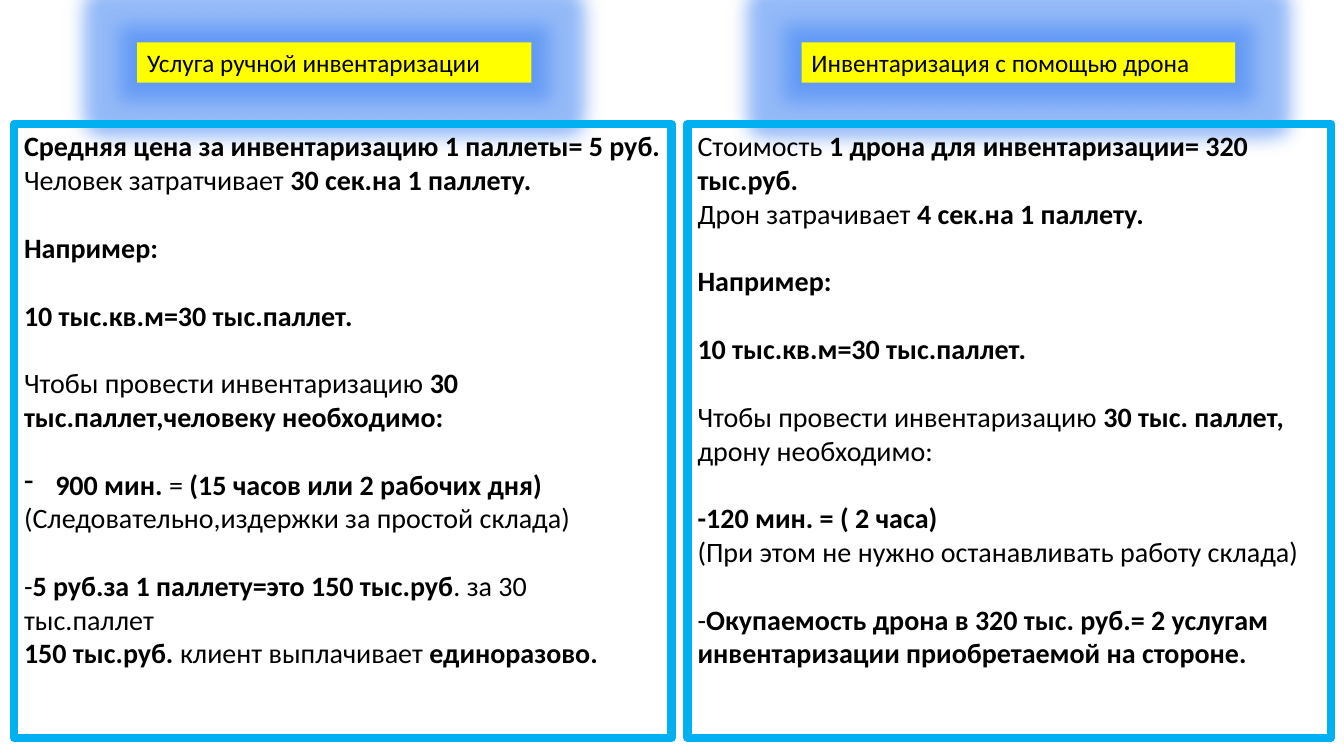
import pptx
import pptx.dml.color
import pptx.enum.shapes
import pptx.enum.text
import pptx.oxml.ns
import pptx.util
from lxml import etree

FONT = "Calibri"
BLACK, YELLOW, SKY, GLOW = "000000", "FFFF00", "00B0F0", "4285F4"
WIDTH, HEIGHT = pptx.util.Inches(13.33), pptx.util.Inches(7.5)
LINE_GAP = 24.4  # height of one line of body text, in points

# Rows as (top, height), in percent of the slide height
HEADER_ROW = (5.6, 5.33)
PANEL_ROW = (16.4, 81.2)

# Columns as (left, width), in percent of the slide width.
# In the text, ** switches bold, "" opens a gap and "• " starts a dash bullet.
COLUMNS = [
    {
        "title": "Услуга ручной инвентаризации",
        "header": (10.2, 29.33),
        "panel": (1.05, 48.91),
        "lines": [
            "**Средняя цена за инвентаризацию 1 паллеты= 5 руб.**",
            "Человек затратчивает **30 сек.на 1 паллету.**",
            "",
            "**Например:**",
            "",
            "**10 тыс.кв.м=30 тыс.паллет.**",
            "",
            "Чтобы провести инвентаризацию **30 тыс.паллет,человеку необходимо:**",
            "",
            "• **900 мин. **= **(15 часов или 2 рабочих дня)**",
            "(Следовательно,издержки за простой склада)",
            "",
            "-**5 руб.за 1 паллету=это 150 тыс.руб**. за 30 тыс.паллет",
            "**150 тыс.руб. **клиент выплачивает **единоразово.**",
        ],
    },
    {
        "title": "Инвентаризация с помощью дрона",
        "header": (59.64, 32.26),
        "panel": (51.16, 47.86),
        "lines": [
            "Стоимость **1 дрона для инвентаризации= 320 тыс.руб.**",
            "Дрон затрачивает **4 сек.на 1 паллету.**",
            "",
            "**Например:**",
            "",
            "**10 тыс.кв.м=30 тыс.паллет.**",
            "",
            "Чтобы провести инвентаризацию **30 тыс. паллет, **дрону необходимо:",
            "",
            "**-120 мин. = ( 2 часа)**",
            "(При этом не нужно останавливать работу склада)",
            "",
            "-**Окупаемость дрона в 320 тыс. руб.= 2 услугам "
            "инвентаризации приобретаемой на стороне.**",
        ],
    },
]


def color(value):
    return pptx.dml.color.RGBColor.from_string(value)


def add_box(slide, column, row):
    """Add a plain rectangle whose text starts at the top left."""
    left, width = (int(WIDTH * share / 100) for share in column)
    top, height = (int(HEIGHT * share / 100) for share in row)
    shape = slide.shapes.add_shape(
        pptx.enum.shapes.MSO_SHAPE.RECTANGLE, left, top, width, height)
    shape.shadow.inherit = False
    frame_format = {
        "word_wrap": True,
        "vertical_anchor": pptx.enum.text.MSO_ANCHOR.TOP,
    }
    for name, value in frame_format.items():
        setattr(shape.text_frame, name, value)
    return shape


def write_line(paragraph, line, size):
    """Write one paragraph, switching bold at every ** mark."""
    paragraph.alignment = pptx.enum.text.PP_ALIGN.LEFT
    for index, text in enumerate(line.split("**")):
        if not text:
            continue
        run = paragraph.add_run()
        run.text = text
        run.font.color.rgb = color(BLACK)
        font_format = {
            "name": FONT,
            "size": pptx.util.Pt(size),
            "bold": index % 2 == 1,
        }
        for name, value in font_format.items():
            setattr(run.font, name, value)


def add_dash_bullet(paragraph):
    properties = paragraph._p.get_or_add_pPr()
    indent = pptx.util.Inches(0.31)
    properties.set("marL", str(indent))
    properties.set("indent", str(-indent))
    bullet = etree.SubElement(properties, pptx.oxml.ns.qn("a:buChar"))
    bullet.set("char", "-")


def add_halo(shape):
    """Surround a shape with a wide glow and a tighter centred shadow."""
    effects = shape._element.spPr.find(pptx.oxml.ns.qn("a:effectLst"))
    layers = {
        "a:glow": {"rad": pptx.util.Inches(0.36)},
        "a:outerShdw": {"blurRad": pptx.util.Inches(0.12), "dist": 0,
                        "algn": "ctr", "rotWithShape": 0},
    }
    for tag, attributes in layers.items():
        layer = etree.SubElement(effects, pptx.oxml.ns.qn(tag))
        for name, value in attributes.items():
            layer.set(name, str(value))
        tint = etree.SubElement(layer, pptx.oxml.ns.qn("a:srgbClr"), val=GLOW)
        etree.SubElement(tint, pptx.oxml.ns.qn("a:alpha"), val="50000")


def add_header(slide, column):
    shape = add_box(slide, column["header"], HEADER_ROW)
    shape.fill.solid()
    shape.fill.fore_color.rgb = color(YELLOW)
    shape.line.fill.background()
    add_halo(shape)
    write_line(shape.text_frame.paragraphs[0], column["title"], 18)


def add_panel(slide, column):
    shape = add_box(slide, column["panel"], PANEL_ROW)
    shape.fill.background()
    shape.line.color.rgb = color(SKY)
    shape.line.width = pptx.util.Pt(6)
    etree.SubElement(shape.line._get_or_add_ln(), pptx.oxml.ns.qn("a:round"))
    frame = shape.text_frame
    paragraph, gap = frame.paragraphs[0], 0
    for index, line in enumerate(column["lines"]):
        if not line:
            gap = LINE_GAP
            continue
        if index:
            paragraph = frame.add_paragraph()
        paragraph.space_before = pptx.util.Pt(gap)
        write_line(paragraph, line.removeprefix("• "), 20)
        if line.startswith("• "):
            add_dash_bullet(paragraph)
        gap = 0


def main():
    presentation = pptx.Presentation()
    presentation.slide_width, presentation.slide_height = WIDTH, HEIGHT
    slide = presentation.slides.add_slide(presentation.slide_layouts[6])

    # Yellow headings first, then the framed panels over their halos
    for add_part in (add_header, add_panel):
        for column in COLUMNS:
            add_part(slide, column)

    presentation.save("out.pptx")


if __name__ == "__main__":
    main()
